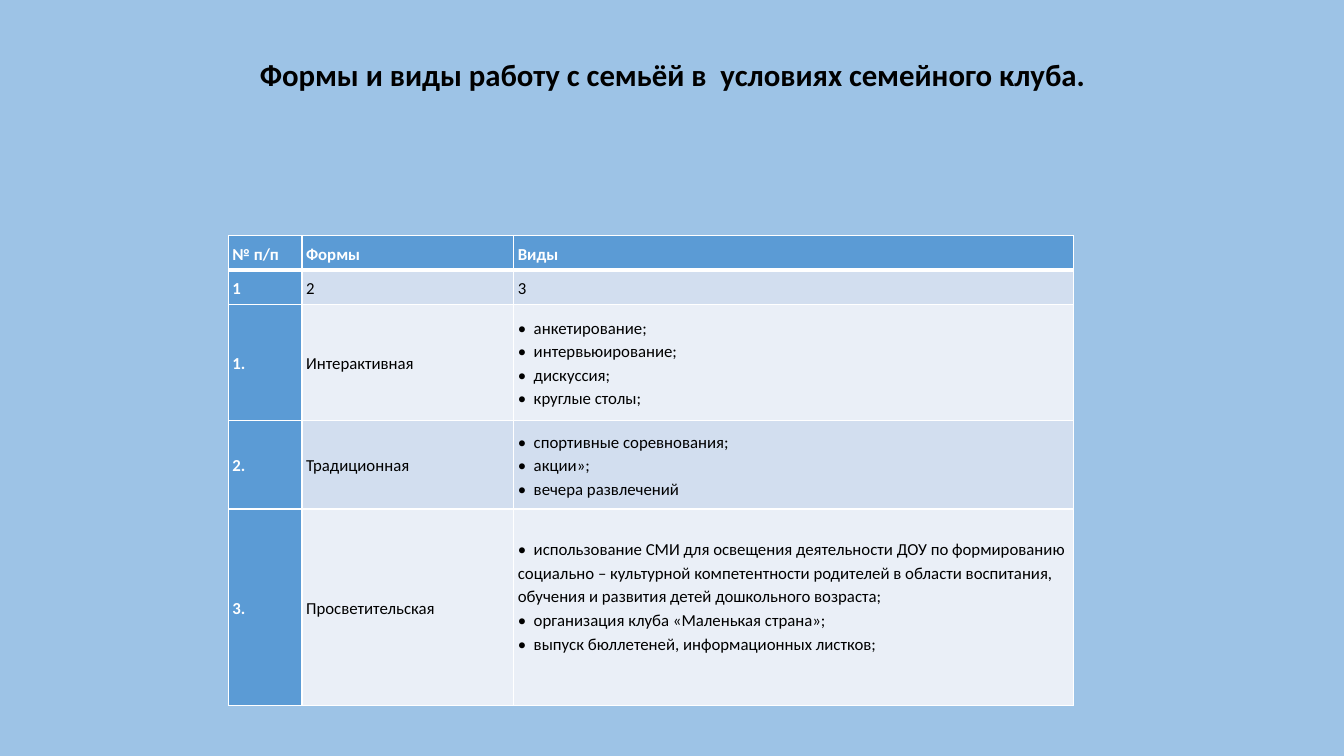
from dataclasses import dataclass

from lxml import etree
from pptx import Presentation
from pptx.dml.color import RGBColor
from pptx.enum.text import MSO_ANCHOR, PP_ALIGN
from pptx.oxml.ns import qn
from pptx.util import Inches, Pt

MIDDLE = MSO_ANCHOR.MIDDLE
CENTER = PP_ALIGN.CENTER

SLIDE_WIDTH, SLIDE_HEIGHT = 13.33, 7.5
TITLE_ONLY_LAYOUT = 5
FONT = "Calibri"
BACKGROUND, BLACK, WHITE = "9DC3E6", "000000", "FFFFFF"
ACCENT, BAND_DARK, BAND_LIGHT = "5B9BD5", "D2DEEF", "EAEFF7"

TITLE = "Формы и виды работу с семьёй в  условиях семейного клуба."
TITLE_BOTTOM_INSET = 0.78
COLUMN_WIDTHS = (0.73, 2.1, 5.55)
TABLE_LEFT, TABLE_TOP = 0.17 * SLIDE_WIDTH, 0.312 * SLIDE_HEIGHT
CELL_INSET = 0.04
BULLET = "•  "


@dataclass(frozen=True)
class ClubRow:
    height: float
    number: str
    form: str
    kinds: tuple[str, ...]
    bulleted: bool = True
    bottom_inset: float = CELL_INSET


ROWS = (
    ClubRow(0.34, "№ п/п", "Формы", ("Виды",), bulleted=False),
    ClubRow(0.34, "1", "2", ("3",), bulleted=False),
    ClubRow(1.15, "1.", "Интерактивная",
            ("анкетирование;", "интервьюирование;", "дискуссия;", "круглые столы;")),
    ClubRow(0.88, "2.", "Традиционная",
            ("спортивные соревнования;", "акции»;", "вечера развлечений")),
    ClubRow(1.95, "3.", "Просветительская",
            ("использование СМИ для освещения деятельности ДОУ по формированию "
             "социально – культурной компетентности родителей в области воспитания, "
             "обучения и развития детей дошкольного возраста;",
             "организация клуба «Маленькая страна»;",
             "выпуск бюллетеней, информационных листков;"),
            bottom_inset=0.27),
)


def color(value: str) -> RGBColor:
    return RGBColor.from_string(value)


def add_run(paragraph, text: str, size: float, text_color: str, bold: bool) -> None:
    run = paragraph.add_run()
    run.text = text
    run.font.name = FONT
    run.font.size = Pt(size)
    run.font.bold = bold
    run.font.color.rgb = color(text_color)


def add_border(cell, side: str, width: float) -> None:
    """Draw one white cell edge; side is L, R, T or B."""
    properties = cell._tc.get_or_add_tcPr()
    line = etree.SubElement(properties, qn(f"a:ln{side}"), w=str(Pt(width)))
    fill = etree.SubElement(line, qn("a:solidFill"))
    etree.SubElement(fill, qn("a:srgbClr"), val=WHITE)


def fill_cell(cell, lines: tuple[str, ...], row_index: int, is_accent: bool,
              bottom_inset: float) -> None:
    widths = {"L": 1, "R": 1, "T": 3 if row_index == 1 else 1,
              "B": 3 if row_index == 0 else 1}
    for side, width in widths.items():
        add_border(cell, side, width)
    band = BAND_DARK if row_index % 2 else BAND_LIGHT
    cell.fill.solid()
    cell.fill.fore_color.rgb = color(ACCENT if is_accent else band)
    cell.vertical_anchor = MIDDLE
    cell.margin_left = cell.margin_right = cell.margin_top = Inches(CELL_INSET)
    cell.margin_bottom = Inches(bottom_inset)
    frame = cell.text_frame
    for index, text in enumerate(lines):
        paragraph = frame.add_paragraph() if index else frame.paragraphs[0]
        paragraph.line_spacing = 1.15
        add_run(paragraph, text, 12, WHITE if is_accent else BLACK, is_accent)


def add_title(slide) -> None:
    title = slide.shapes.title
    title.left, title.top = Inches(0.92), Inches(0.4)
    title.width, title.height = Inches(11.5), Inches(1.45)
    frame = title.text_frame
    frame.word_wrap = True
    frame.vertical_anchor = MIDDLE
    frame.margin_bottom = Inches(TITLE_BOTTOM_INSET)
    paragraph = frame.paragraphs[0]
    paragraph.alignment = CENTER
    paragraph.line_spacing = 0.9
    add_run(paragraph, TITLE, 22, BLACK, True)


def add_club_table(slide) -> None:
    table = slide.shapes.add_table(
        len(ROWS), len(COLUMN_WIDTHS), Inches(TABLE_LEFT), Inches(TABLE_TOP),
        Inches(sum(COLUMN_WIDTHS)), Inches(sum(row.height for row in ROWS))).table
    table.first_col = True
    for column, width in zip(table.columns, COLUMN_WIDTHS):
        column.width = Inches(width)
    for row_index, row in enumerate(ROWS):
        table.rows[row_index].height = Inches(row.height)
        prefix = BULLET if row.bulleted else ""
        kinds = tuple(prefix + kind for kind in row.kinds)
        for column_index, lines in enumerate(((row.number,), (row.form,), kinds)):
            is_kinds = column_index == len(COLUMN_WIDTHS) - 1
            fill_cell(table.cell(row_index, column_index), lines, row_index,
                      row_index == 0 or column_index == 0,
                      row.bottom_inset if is_kinds else CELL_INSET)


def main() -> None:
    presentation = Presentation()
    presentation.slide_width = Inches(SLIDE_WIDTH)
    presentation.slide_height = Inches(SLIDE_HEIGHT)
    slide = presentation.slides.add_slide(presentation.slide_layouts[TITLE_ONLY_LAYOUT])
    slide.background.fill.solid()
    slide.background.fill.fore_color.rgb = color(BACKGROUND)
    add_title(slide)
    add_club_table(slide)
    presentation.save("out.pptx")


if __name__ == "__main__":
    main()
